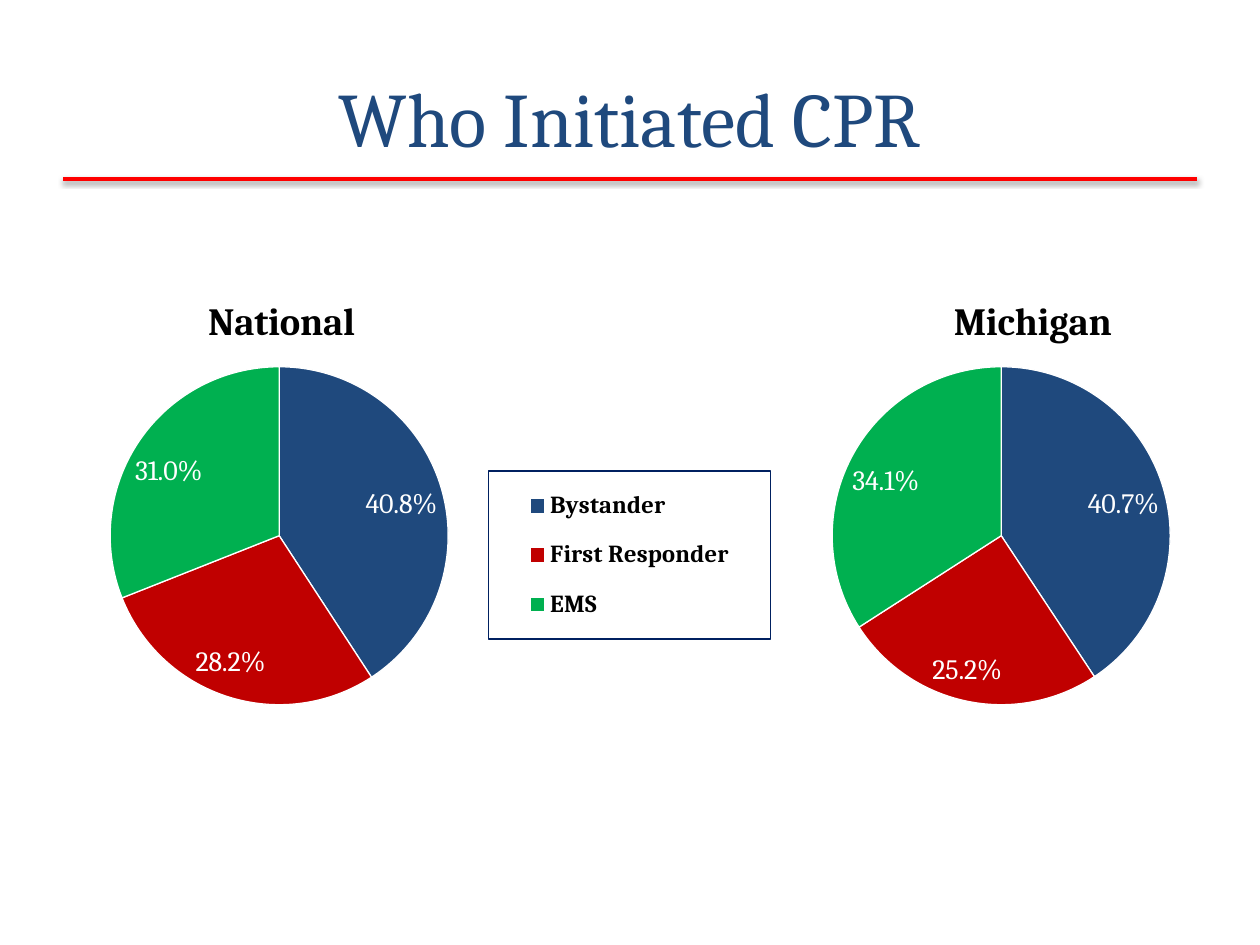
from lxml import etree
from pptx import Presentation
from pptx.chart.data import CategoryChartData
from pptx.dml.color import RGBColor
from pptx.enum import chart as kinds, shapes, text
from pptx.oxml import parse_xml
from pptx.oxml.ns import nsdecls, qn
from pptx.util import Inches, Pt


def color(value):
    return RGBColor.from_string(value)


def write(frame, words, size=18, bold=False, fill="000000", align=text.PP_ALIGN.CENTER):
    paragraph = frame.paragraphs[0]
    paragraph.alignment = align
    run = paragraph.add_run()
    run.text = words
    run.font.name = "Cambria"
    run.font.size = Pt(size)
    run.font.bold = bold
    run.font.color.rgb = color(fill)


deck = Presentation()
deck.slide_width, deck.slide_height = Inches(10), Inches(7.5)
slide = deck.slides.add_slide(deck.slide_layouts[6])

rule = slide.shapes.add_connector(
    shapes.MSO_CONNECTOR.STRAIGHT, Inches(0.5), Inches(1.42), Inches(9.5), Inches(1.42))
rule.line.color.rgb = color("FF0000")
rule.line.width = Pt(2)
rule._element.spPr.append(parse_xml(
    f'<a:effectLst {nsdecls("a")}>'
    f'<a:outerShdw blurRad="{Pt(3.1)}" dist="{Pt(1.6)}" dir="5400000" rotWithShape="0">'
    '<a:srgbClr val="000000"><a:alpha val="38000"/></a:srgbClr></a:outerShdw></a:effectLst>'))

heading = slide.shapes.add_textbox(Inches(0.5), Inches(0.3), Inches(9), Inches(1.25)).text_frame
heading.word_wrap = True
heading.vertical_anchor = text.MSO_ANCHOR.MIDDLE
write(heading, "Who Initiated CPR", size=44, fill="1F497D")

responders = ["Bystander", "First Responder", "EMS"]
regions = [
    ("National", -0.09, 0.27, responders, [40.8, 28.2, 31.0]),
    ("Michigan", 5.64, 0.3, ["1", "2", "3"], [40.7, 25.2, 34.1]),
]
for region, left, title_left, categories, shares in regions:
    data = CategoryChartData()
    data.categories = categories
    data.add_series("Series 1", shares)
    pie = slide.shapes.add_chart(
        kinds.XL_CHART_TYPE.PIE, Inches(left), Inches(1.56), Inches(6.25), Inches(4.95), data).chart
    pie.font.name = "Cambria"
    pie.font.size = Pt(18)
    pie.font.color.rgb = color("000000")
    pie.has_title = True
    write(pie.chart_title.text_frame, region, size=22, bold=True)

    plot = pie.plots[0]
    plot.vary_by_categories = True
    for index, fill in enumerate(["1F497D", "C00000", "00B050"]):
        slice_format = plot.series[0].points[index].format
        slice_format.fill.solid()
        slice_format.fill.fore_color.rgb = color(fill)
        slice_format.line.color.rgb = color("FFFFFF")
        slice_format.line.width = Pt(0.75)

    labels = plot.series[0].data_labels
    labels.show_value = False
    labels.show_percentage = True
    labels.number_format = "0.0%"
    labels.number_format_is_linked = False
    labels.position = kinds.XL_LABEL_POSITION.BEST_FIT
    labels.font.name = "Cambria"
    labels.font.size = Pt(16)
    labels.font.color.rgb = color("FFFFFF")

    placements = [
        (pie.chart_title._element, 1, {"x": title_left, "y": 0.15}),
        (pie._chartSpace.chart.plotArea, 0, {"x": 0.095, "y": 0.273, "w": 0.548, "h": 0.542}),
    ]
    pie.has_legend = categories == responders
    if pie.has_legend:
        legend = pie.legend
        legend.position = kinds.XL_LEGEND_POSITION.RIGHT
        legend.include_in_layout = False
        legend.font.name = "Cambria"
        legend.font.size = Pt(14)
        legend.font.bold = True
        legend.font.color.rgb = color("000000")
        legend._element.find(qn("c:overlay")).addnext(parse_xml(
            f'<c:spPr {nsdecls("c", "a")}><a:ln w="{Pt(1)}"><a:solidFill>'
            '<a:srgbClr val="002060"/></a:solidFill></a:ln></c:spPr>'))
        placements.append((legend._element, 1, {"x": 0.635, "y": 0.44, "w": 0.358, "h": 0.27}))

    for part, position, box in placements:
        for old in part.findall(qn("c:layout")):
            part.remove(old)
        layout = etree.Element(qn("c:layout"))
        manual = etree.SubElement(layout, qn("c:manualLayout"))
        if part.tag == qn("c:plotArea"):
            etree.SubElement(manual, qn("c:layoutTarget"), val="inner")
        for axis in "xy":
            etree.SubElement(manual, qn(f"c:{axis}Mode"), val="edge")
        for side, share in box.items():
            etree.SubElement(manual, qn(f"c:{side}"), val=str(share))
        part.insert(position, layout)

deck.save("out.pptx")
